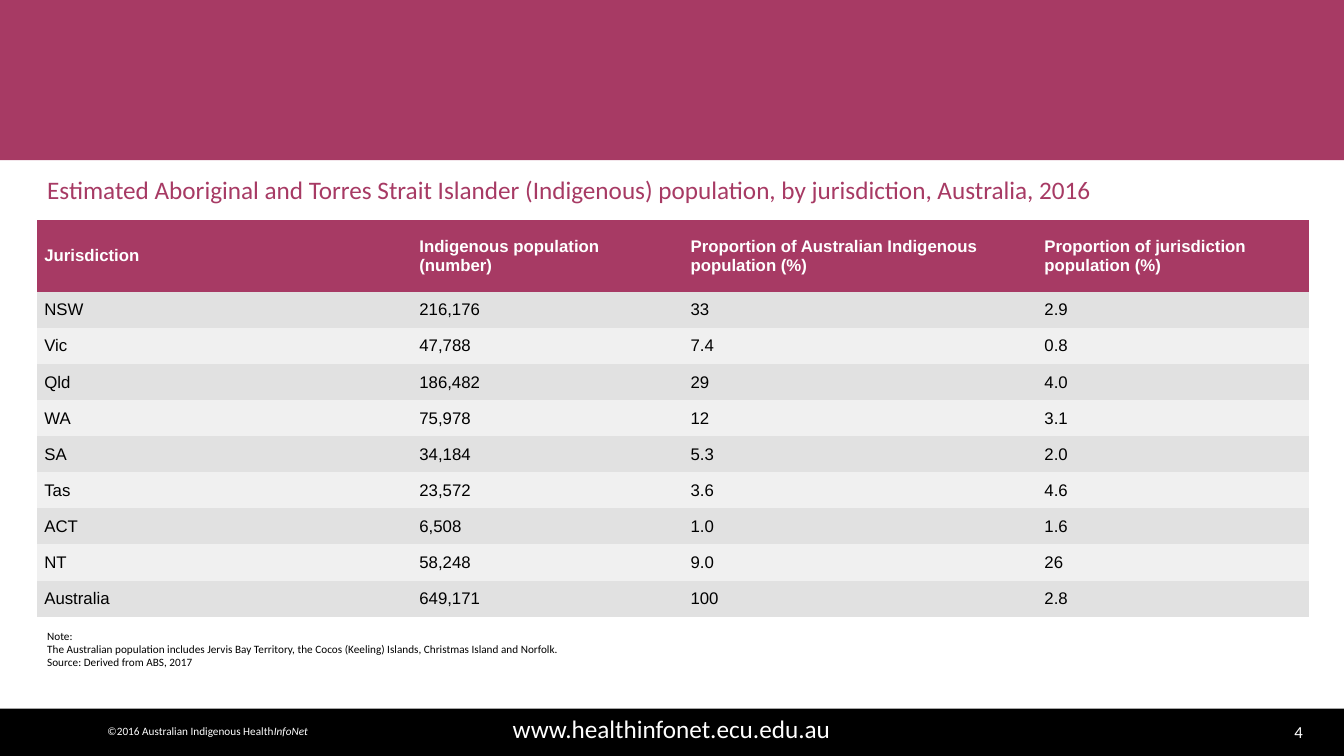
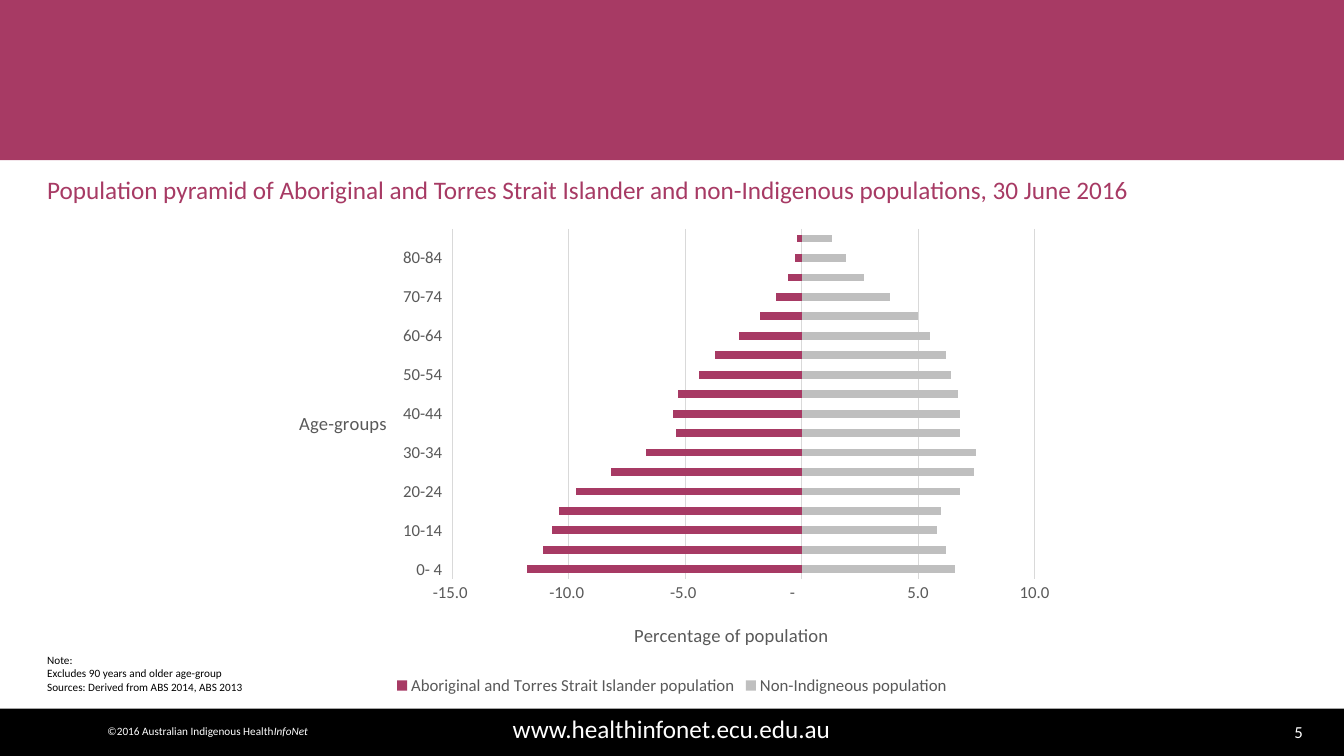
from lxml import etree
from pptx import Presentation
from pptx.chart.data import CategoryChartData as ChartData
from pptx.dml.color import RGBColor
from pptx.enum.chart import XL_CHART_TYPE as Kind, XL_LEGEND_POSITION as Legend
from pptx.enum.chart import XL_TICK_LABEL_POSITION as Label, XL_TICK_MARK as Tick
from pptx.enum.shapes import MSO_SHAPE as Shape
from pptx.enum.text import MSO_ANCHOR as Anchor, PP_ALIGN as Align
from pptx.oxml.ns import qn
from pptx.util import Inches, Pt

PLUM, BLACK, WHITE = "A73A64", "000000", "FFFFFF"
GREY, RULE, SILVER = "595959", "D9D9D9", "BFBFBF"
BANDS = ["E1E1E1", "F0F0F0"]
LEFT, WIDTH = 0.37, 12.6
NO_GRID = "{2D5ABB26-0587-4C30-8999-92F81FD0307C}"

HEAD = ["Jurisdiction", "Indigenous population (number)",
        "Proportion of Australian Indigenous population (%)",
        "Proportion of jurisdiction population (%)"]
ROWS = [
    ["NSW", "216,176", "33", "2.9"],
    ["Vic", "47,788", "7.4", "0.8"],
    ["Qld", "186,482", "29", "4.0"],
    ["WA", "75,978", "12", "3.1"],
    ["SA", "34,184", "5.3", "2.0"],
    ["Tas", "23,572", "3.6", "4.6"],
    ["ACT", "6,508", "1.0", "1.6"],
    ["NT", "58,248", "9.0", "26"],
    ["Australia", "649,171", "100", "2.8"],
]
AGES = ["0- 4", "5- 9"] + [f"{age}-{age + 4}" for age in range(10, 90, 5)]
SERIES = [
    ("Aboriginal and Torres Strait Islander population", PLUM,
     [-11.8, -11.1, -10.7, -10.4, -9.7, -8.2, -6.7, -5.4, -5.5,
      -5.3, -4.4, -3.7, -2.7, -1.8, -1.1, -0.6, -0.3, -0.2]),
    ("Non-Indigneous population", SILVER,
     [6.6, 6.2, 5.8, 6.0, 6.8, 7.4, 7.5, 6.8, 6.8,
      6.7, 6.4, 6.2, 5.5, 5.0, 3.8, 2.7, 1.9, 1.3]),
]


def paint(target, color):
    """Give a fill, or the fill of a line, one solid colour."""
    target.solid()
    target.fore_color.rgb = RGBColor.from_string(color)


def style(font, size, color, name="Calibri", **more):
    for key, value in dict(size=Pt(size), name=name, **more).items():
        setattr(font, key, value)
    paint(font.fill, color)


def band(slide, box, color):
    shape = slide.shapes.add_shape(Shape.RECTANGLE, *map(Inches, box))
    shape.shadow.inherit = False
    paint(shape.fill, color)
    shape.line.fill.background()


def write(slide, box, lines, size, color, align=Align.LEFT,
          anchor=Anchor.TOP, wrap=True, space=None):
    """Add a text box; each line is a list of (text, italic) runs or a string."""
    frame = slide.shapes.add_textbox(*map(Inches, box)).text_frame
    frame.word_wrap, frame.vertical_anchor = wrap, anchor
    for i, line in enumerate(lines):
        para = frame.add_paragraph() if i else frame.paragraphs[0]
        para.alignment, para.line_spacing = align, space
        for text, slant in [(line, False)] if isinstance(line, str) else line:
            run = para.add_run()
            run.text = text
            style(run.font, size, color, italic=slant)


def base(deck, title, number):
    """Start a slide with the bands, footer and title that all slides share."""
    slide = deck.slides.add_slide(deck.slide_layouts[6])
    band(slide, (-0.03, 0, 13.36, 1.59), PLUM)
    band(slide, (0, 7.03, 13.33, 0.47), BLACK)
    write(slide, (11.95, 7.11, 1.07, 0.3), [str(number)], 12, WHITE, Align.RIGHT)
    write(slide, (0.62, 7.03, 12.08, 0.39), ["www.healthinfonet.ecu.edu.au"],
          18, WHITE, Align.CENTER)
    owner = [("©2016 Australian Indigenous Health", False), ("InfoNet", True)]
    write(slide, (0.95, 7.14, 2.22, 0.24), [owner], 8, WHITE, Align.CENTER, wrap=False)
    write(slide, (LEFT, 1.62, WIDTH, 0.55), [title], 18, PLUM,
          anchor=Anchor.MIDDLE, space=0.9)
    return slide


def fill_cell(cell, text, back, color, bold):
    paint(cell.fill, back)
    look = dict(vertical_anchor=Anchor.MIDDLE, margin_top=0, margin_bottom=0,
                margin_left=Inches(0.07), margin_right=Inches(0.07), text=text)
    for key, value in look.items():
        setattr(cell, key, value)
    para = cell.text_frame.paragraphs[0]
    para.space_after = Pt(5)
    style(para.runs[0].font, 12, color, "Arial", bold=bold)


def add_grid(slide, box):
    frame = slide.shapes.add_table(len(ROWS) + 1, len(HEAD), *map(Inches, box))
    table = frame.table
    frame._element.find(".//" + qn("a:tableStyleId")).text = NO_GRID
    for col, width in zip(table.columns, (3.72, 2.69, 3.51, 2.69)):
        col.width = Inches(width)
    for r, texts in enumerate([HEAD] + ROWS):
        # The head row is twice as high as the others
        table.rows[r].height = Inches(box[3] / (len(ROWS) + 2) * (1 if r else 2))
        look = (BANDS[(r - 1) % 2], BLACK, False) if r else (PLUM, WHITE, True)
        for c, text in enumerate(texts):
            fill_cell(table.cell(r, c), text, *look)


def lay_out(part, index, **places):
    """Fix a chart part at fractions of the chart box."""
    for old in part.findall(qn("c:layout")):
        part.remove(old)
    layout = etree.Element(qn("c:layout"))
    manual = etree.SubElement(layout, qn("c:manualLayout"))
    modes = dict(xMode="edge", yMode="edge")
    if "w" in places:
        modes = dict(layoutTarget="inner", **modes)
    for key, value in {**modes, **places}.items():
        etree.SubElement(manual, qn("c:" + key)).set("val", str(value))
    part.insert(index, layout)


def name_axis(axis, text, x, y):
    axis.major_tick_mark = axis.minor_tick_mark = Tick.NONE
    style(axis.tick_labels.font, 12, GREY)
    title = axis.axis_title
    frame = title.text_frame
    frame.text = text
    frame._txBody.bodyPr.set("rot", "0")
    style(frame.paragraphs[0].runs[0].font, 13.3, GREY, bold=False)
    lay_out(title._element, 1, x=x, y=y)


def rule(line):
    line.width = Pt(0.75)
    paint(line.fill, RULE)


def add_pyramid(slide, box):
    data = ChartData(number_format="0.0")
    data.categories = AGES
    for name, _, values in SERIES:
        data.add_series(name, values)
    chart = slide.shapes.add_chart(Kind.BAR_STACKED, *map(Inches, box), data).chart
    style(chart.font, 12, GREY)
    chart.has_title, chart.has_legend = False, True
    chart.legend.position = Legend.BOTTOM
    chart.legend.include_in_layout = False
    style(chart.legend.font, 12, GREY)

    plot = chart.plots[0]
    plot.gap_width, plot.overlap, plot.vary_by_categories = 150, 100, False
    for series, (_, color, _) in zip(plot.series, SERIES):
        series.invert_if_negative = False
        paint(series.format.fill, color)

    ages, share = chart.category_axis, chart.value_axis
    name_axis(ages, "Age-groups", 0.026, 0.39)
    ages.tick_labels.offset = 100
    ages.tick_label_position = Label.LOW
    rule(ages.format.line)
    skip = etree.Element(qn("c:tickLblSkip"), val="2")
    ages._element.find(qn("c:noMultiLvlLbl")).addprevious(skip)

    name_axis(share, "Percentage of population", 0.448, 0.832)
    scale = dict(minimum_scale=-15, maximum_scale=10, major_unit=5,
                 has_major_gridlines=True)
    for key, value in scale.items():
        setattr(share, key, value)
    share.tick_labels.number_format = r'_-* #,##0.0_-;\-* #,##0.0_-;_-* "-"??_-;'
    share.tick_labels.number_format_is_linked = False
    share.format.line.fill.background()
    rule(share.major_gridlines.format.line)
    area = chart._chartSpace.find(".//" + qn("c:plotArea"))
    lay_out(area, 0, x=0.223, y=0.019, w=0.734, h=0.73)


def table_slide(deck):
    slide = base(deck, "Estimated Aboriginal and Torres Strait Islander (Indigenous) "
                 "population, by jurisdiction, Australia, 2016", 4)
    add_grid(slide, (LEFT, 2.18, WIDTH, 3.94))
    write(slide, (LEFT, 6.19, WIDTH, 0.69), [
        "Note:",
        "The Australian population includes Jervis Bay Territory, the Cocos (Keeling) "
        "Islands, Christmas Island and Norfolk.",
        "Source: Derived from ABS, 2017"], 8, BLACK)


def chart_slide(deck):
    slide = base(deck, "Population pyramid of Aboriginal and Torres Strait Islander "
                 "and non-Indigenous populations, 30 June 2016", 5)
    add_pyramid(slide, (2.73, 2.18, 7.87, 4.76))
    write(slide, (LEFT, 6.43, WIDTH, 0.5), [
        "Note:",
        "Excludes 90 years and older age-group",
        "Sources: Derived from ABS 2014, ABS 2013"],
        8, BLACK, Align.JUSTIFY, Anchor.MIDDLE)


def main():
    deck = Presentation()
    deck.slide_width, deck.slide_height = Inches(13.33), Inches(7.5)
    table_slide(deck)
    chart_slide(deck)
    deck.save("out.pptx")


if __name__ == "__main__":
    main()
